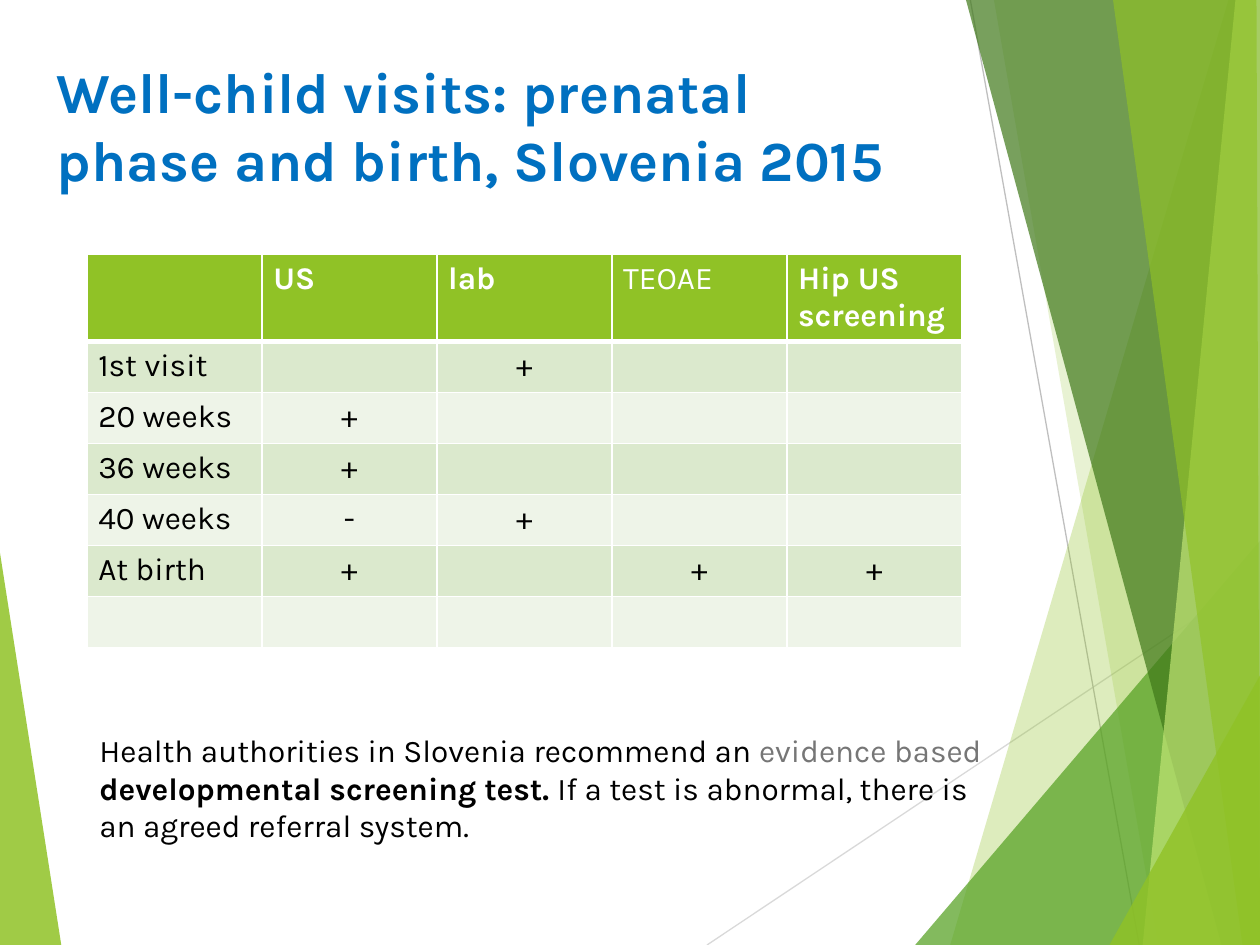
"""Build the slide on prenatal and birth well-child visits."""
from typing import NamedTuple

from lxml import etree
from pptx import Presentation
from pptx.dml.color import RGBColor
from pptx.enum.shapes import MSO_CONNECTOR
from pptx.enum.text import MSO_ANCHOR, MSO_AUTO_SIZE, PP_ALIGN
from pptx.oxml.ns import qn
from pptx.util import Pt

LINE = MSO_CONNECTOR.STRAIGHT
TOP = MSO_ANCHOR.TOP
FIXED = MSO_AUTO_SIZE.NONE
LEFT, CENTER = PP_ALIGN.LEFT, PP_ALIGN.CENTER
FONT = "Karla"
WHITE, BLACK, BLUE, GRAY = "FFFFFF", "000000", "0070C0", "767676"
GREEN, PALE, LIGHT = "90C226", "DBE9CD", "EEF4E8"
WIDE, HIGH = 720, 540


class Facet(NamedTuple):
    points: list
    color: str
    alpha: int


class Ray(NamedTuple):
    start: tuple
    end: tuple
    color: str


class Span(NamedTuple):
    text: str
    color: str = BLACK
    bold: bool = False


RAYS = [
    Ray((404, HIGH), (WIDE, 329), "D9D9D9"),
    Ray((554.5, 0), (651, HIGH), "BFBFBF"),
]
EDGE = [(WIDE, HIGH), (WIDE, 0)]
FACETS = [
    Facet([(0, 316), (35, HIGH), (0, HIGH)], GREEN, 85),
    Facet([(702, 0), (543, HIGH), *EDGE], GREEN, 30),
    Facet([(567.5, 0), (662, HIGH), *EDGE], GREEN, 20),
    Facet([(523, HIGH), (WIDE, 309), (WIDE, HIGH)], "54A021", 72),
    Facet([(552.5, 0), (698.5, HIGH), *EDGE], "3F7819", 70),
    Facet([(706.5, 0), (653, HIGH), *EDGE], "C0E474", 70),
    Facet([(636, 0), (710, HIGH), (WIDE, HIGH), (718.5, 0)], GREEN, 65),
    Facet([(634.5, HIGH), (WIDE, 385.5), (WIDE, HIGH)], GREEN, 80),
]
ROWS = [
    ["", "US", "lab", "TEOAE", "Hip US screening"],
    ["1st visit", "", "+", "", ""],
    ["20 weeks", "+", "", "", ""],
    ["36 weeks", "+", "", "", ""],
    ["40 weeks", "-", "+", "", ""],
    ["At birth", "+", "", "+", "+"],
    [""] * 5,
]
NOTE = [
    Span("Health authorities in Slovenia recommend an "),
    Span("evidence based ", GRAY),
    Span("developmental screening test. ", bold=True),
    Span("If a test is abnormal, there is an agreed referral system."),
]


def paint(target, color: str) -> None:
    """Give a fill a solid colour."""
    target.solid()
    target.fore_color.rgb = RGBColor.from_string(color)


def style(run, size: float, color: str, bold: bool) -> None:
    """Set the font of a run."""
    run.font.name, run.font.size, run.font.bold = FONT, Pt(size), bold
    paint(run.font.fill, color)


def draw_ray(slide, ray: Ray) -> None:
    """Draw a thin line without a shadow."""
    line = slide.shapes.add_connector(LINE, *map(Pt, ray.start + ray.end))
    line.line.width = Pt(0.75)
    paint(line.line.fill, ray.color)
    etree.SubElement(line._element.spPr, qn("a:effectLst"))


def draw_facet(slide, facet: Facet) -> None:
    """Draw a translucent polygon."""
    first, *rest = facet.points
    pen = slide.shapes.build_freeform(*first, scale=Pt(1))
    pen.add_line_segments(rest)
    shape = pen.convert_to_shape()
    shape.shadow.inherit = False
    shape.line.fill.background()
    paint(shape.fill, facet.color)
    color = shape._element.spPr.find(qn("a:solidFill"))[0]
    etree.SubElement(color, qn("a:alpha"), val=str(facet.alpha * 1000))


def add_edge(cell, side: str, width: float) -> None:
    """Add a white border to one side of a cell."""
    props = cell._tc.get_or_add_tcPr()
    edge = etree.SubElement(props, qn(f"a:ln{side}"), w=str(Pt(width)))
    fill = etree.SubElement(edge, qn("a:solidFill"))
    etree.SubElement(fill, qn("a:srgbClr"), val=WHITE)


def fill_cell(cell, text: str, row: int, col: int) -> None:
    """Write and format one table cell."""
    head = row == 0
    for side in "LRTB":
        thick = (row, side) in [(0, "B"), (1, "T")]
        add_edge(cell, side, 3 if thick else 1)
    paint(cell.fill, GREEN if head else PALE if row % 2 else LIGHT)
    cell.margin_left = cell.margin_right = Pt(6.5)
    cell.text_frame.text = text
    para = cell.text_frame.paragraphs[0]
    para.alignment = LEFT if head or col == 0 else CENTER
    for run in para.runs:
        style(run, 18, WHITE if head else BLACK, head and text != "TEOAE")


def add_grid(slide) -> None:
    """Add the table of visits and tests."""
    size = len(ROWS), len(ROWS[0])
    box = map(Pt, (49.7, 145.5, 500, 204.4))
    table = slide.shapes.add_table(*size, *box).table
    for r, row in enumerate(ROWS):
        for c, text in enumerate(row):
            fill_cell(table.cell(r, c), text, r, c)


def set_title(slide) -> None:
    """Move and format the title."""
    title = slide.shapes.title
    title.left, title.top, title.width, title.height = map(Pt, (25.2, 26, 500, 104))
    frame = title.text_frame
    frame.text = "Well-child visits: prenatal phase and birth, Slovenia 2015"
    frame.auto_size, frame.vertical_anchor = FIXED, TOP
    frame.margin_top = Pt(6.5)
    para = frame.paragraphs[0]
    para.alignment = LEFT
    style(para.runs[0], 32.4, BLUE, True)


def add_note(slide) -> None:
    """Add the closing remark below the table."""
    box = slide.shapes.add_textbox(*map(Pt, (49.7, 414, 531.5, 72.7)))
    box.text_frame.word_wrap = True
    para = box.text_frame.paragraphs[0]
    for span in NOTE:
        run = para.add_run()
        run.text = span.text
        style(run, 18, span.color, span.bold)


def main() -> None:
    """Build and save the slide."""
    deck = Presentation()
    deck.slide_width, deck.slide_height = Pt(WIDE), Pt(HIGH)
    slide = deck.slides.add_slide(deck.slide_layouts.get_by_name("Title Only"))
    first, *rest = FACETS
    draw_facet(slide, first)
    for ray in RAYS:
        draw_ray(slide, ray)
    for facet in rest:
        draw_facet(slide, facet)
    set_title(slide)
    add_grid(slide)
    add_note(slide)
    deck.save("out.pptx")


if __name__ == "__main__":
    main()
